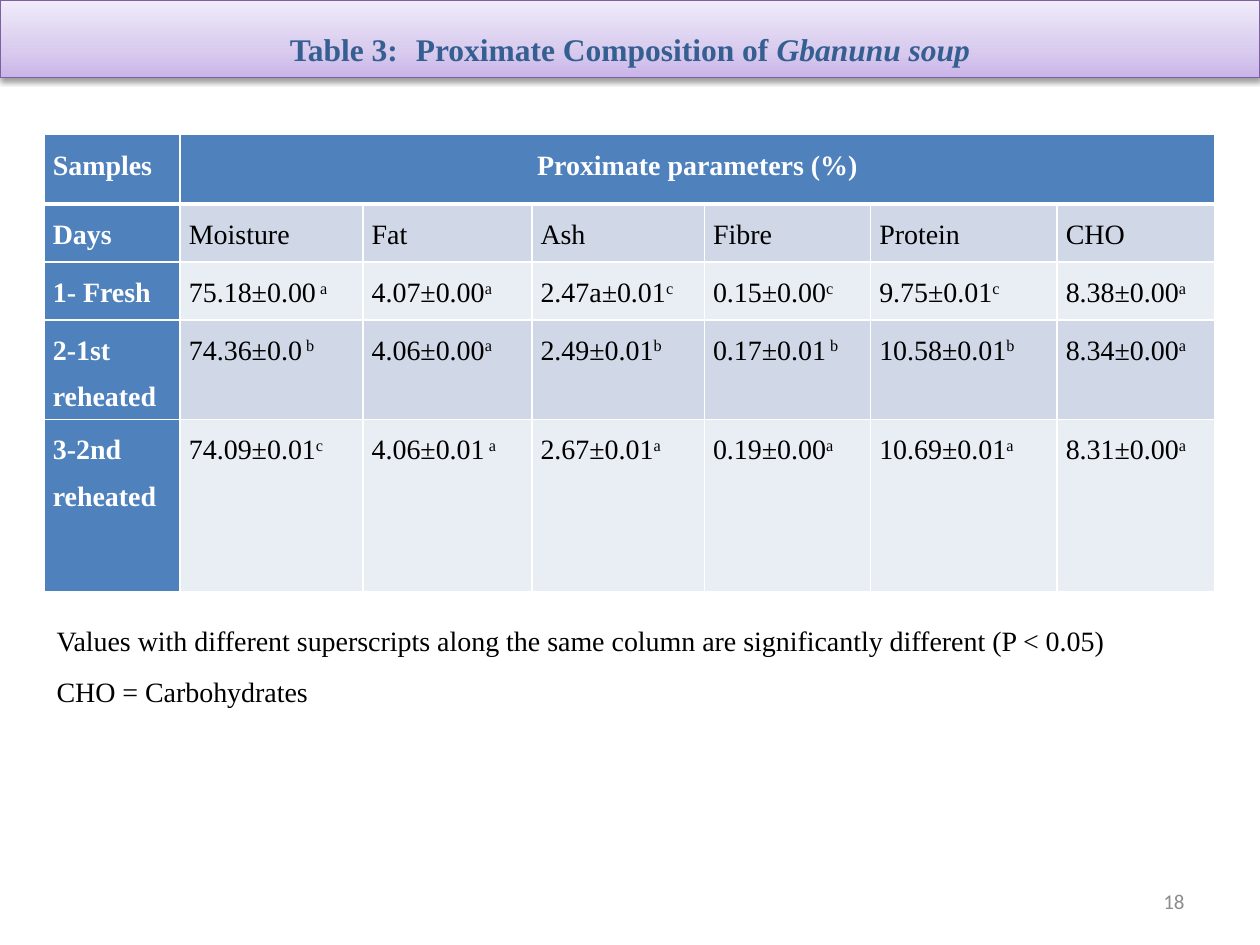
"""Build a slide with the proximate composition table of Gbanunu soup."""
from lxml.etree import SubElement
from pptx import Presentation
from pptx.dml.color import RGBColor
from pptx.enum.shapes import MSO_SHAPE as Shape
from pptx.enum.text import MSO_ANCHOR as Anchor, PP_ALIGN as Align
from pptx.oxml import parse_xml
from pptx.oxml.ns import nsdecls, qn
from pptx.util import Pt

TITLE = [("Table 3:\tProximate Composition of ", False), ("Gbanunu soup", True)]
ROWS = [
    ["Samples", "Proximate parameters (%)"],
    ["Days", "Moisture", "Fat", "Ash", "Fibre", "Protein", "CHO"],
    ["1- Fresh", "75.18±0.00^ a", "4.07±0.00^a", "2.47a±0.01^c",
     "0.15±0.00^c", "9.75±0.01^c", "8.38±0.00^a"],
    ["2-1st reheated", "74.36±0.0^ b", "4.06±0.00^a", "2.49±0.01^b",
     "0.17±0.01^ b", "10.58±0.01^b", "8.34±0.00^a"],
    ["3-2nd reheated", "74.09±0.01^c", "4.06±0.01^ a", "2.67±0.01^a",
     "0.19±0.00^a", "10.69±0.01^a", "8.31±0.00^a"],
]
NOTES = [
    "Values with different superscripts along the same column are "
    "significantly different (P < 0.05)",
    "CHO = Carbohydrates",
]
PAGE_NUMBER = "18"
COLUMN_WIDTHS = [77.8, 104.4, 96.5, 98.6, 95, 106.6, 90]
ROW_HEIGHTS = [39.6, 33.1, 33.1, 56.9, 98.6]
LEFT, WIDTH = 25.2, 668.9
SERIF, SANS = "Times New Roman", "Calibri"

BLACK = RGBColor(0x00, 0x00, 0x00)
WHITE = RGBColor(0xFF, 0xFF, 0xFF)
BLUE = RGBColor(0x4F, 0x81, 0xBD)
NAVY = RGBColor(0x36, 0x5F, 0x91)
PURPLE = RGBColor(0x7D, 0x60, 0xA0)
GRAY = RGBColor(0x8C, 0x8C, 0x8C)
BANDS = [RGBColor(0xE9, 0xED, 0xF4), RGBColor(0xD0, 0xD8, 0xE8)]
LILACS = [(0, RGBColor(0xC9, 0xB5, 0xE8)), (35, RGBColor(0xD8, 0xCB, 0xEE)),
          (100, RGBColor(0xF0, 0xEA, 0xF9))]


def style(span, size, color, bold=False, italic=False, name=SERIF):
    font = span.font
    font.name, font.size, font.bold, font.italic = name, Pt(size), bold, italic
    font.color.rgb = color


def add_border(cell, side, width):
    line = SubElement(cell._tc.get_or_add_tcPr(), qn(f"a:{side}"), w=str(Pt(width)))
    fill = SubElement(line, qn("a:solidFill"))
    SubElement(fill, qn("a:srgbClr"), val=str(WHITE))


def fill_cell(cell, text, row, column):
    heading = row == 0 or column == 0
    cell.margin_left = cell.margin_right = Pt(5)
    cell.margin_top = cell.margin_bottom = 0
    add_border(cell, "lnL", 1)
    add_border(cell, "lnR", 1)
    add_border(cell, "lnT", 3 if row == 1 else 1)
    add_border(cell, "lnB", 3 if row == 0 else 1)
    cell.fill.solid()
    cell.fill.fore_color.rgb = BLUE if heading else BANDS[row % 2]
    para = cell.text_frame.paragraphs[0]
    para.alignment = Align.CENTER if cell.is_merge_origin else Align.JUSTIFY
    para.line_spacing = 1.5
    value, _, mark = text.partition("^")
    for part, baseline in ((value, 0), (mark, 30000)):
        if part:
            span = para.add_run()
            span.text = part
            style(span, 16, WHITE if heading else BLACK, bold=heading)
            if baseline:
                span.font._element.set("baseline", str(baseline))


def add_table(page):
    frame = page.shapes.add_table(len(ROWS), len(COLUMN_WIDTHS), Pt(LEFT), Pt(77),
                                  Pt(WIDTH), Pt(sum(ROW_HEIGHTS)))
    table = frame.table
    table.first_col = True
    for column, width in zip(table.columns, COLUMN_WIDTHS):
        column.width = Pt(width)
    for row, height in zip(table.rows, ROW_HEIGHTS):
        row.height = Pt(height)
    table.cell(0, 1).merge(table.cell(0, len(COLUMN_WIDTHS) - 1))
    for r, texts in enumerate(ROWS):
        for c, text in enumerate(texts):
            fill_cell(table.cell(r, c), text, r, c)


def add_banner(page):
    banner = page.shapes.add_shape(Shape.RECTANGLE, 0, Pt(0.5), Pt(720), Pt(44))
    banner.line.color.rgb = PURPLE
    banner.line.width = Pt(0.75)
    stops = "".join(f'<a:gs pos="{place * 1000}"><a:srgbClr val="{color}"/></a:gs>'
                    for place, color in LILACS)
    properties = banner._element.spPr
    properties.find(qn("a:prstGeom")).addnext(parse_xml(
        f'<a:gradFill {nsdecls("a")} rotWithShape="1"><a:gsLst>{stops}</a:gsLst>'
        '<a:lin ang="16200000" scaled="0"/></a:gradFill>'))
    properties.append(parse_xml(
        f'<a:effectLst {nsdecls("a")}><a:outerShdw blurRad="{Pt(3.1)}" '
        f'dist="{Pt(1.6)}" dir="5400000" rotWithShape="0"><a:srgbClr val="{BLACK}">'
        '<a:alpha val="38000"/></a:srgbClr></a:outerShdw></a:effectLst>'))
    banner.text_frame.word_wrap = True
    para = banner.text_frame.paragraphs[0]
    para.alignment, para.line_spacing, para.space_before = Align.CENTER, 1.5, Pt(2)
    for text, italic in TITLE:
        span = para.add_run()
        span.text = text
        style(span, 18, NAVY, bold=True, italic=italic)


def add_text(page, place, lines, size, color, name, alignment, spacing, anchor):
    box = page.shapes.add_textbox(*map(Pt, place))
    frame = box.text_frame
    frame.word_wrap = True
    frame.vertical_anchor = anchor
    frame.text = "\n".join(lines)
    for para in frame.paragraphs:
        para.alignment, para.line_spacing = alignment, spacing
        style(para.runs[0], size, color, name=name)


def main():
    deck = Presentation()
    deck.slide_width, deck.slide_height = Pt(720), Pt(540)
    page = deck.slides.add_slide(deck.slide_layouts[6])
    add_table(page)
    add_banner(page)
    add_text(page, (LEFT, 343.4, WIDTH, 62.6), NOTES, 16, BLACK, SERIF,
             Align.JUSTIFY, 1.5, Anchor.TOP)
    add_text(page, (516, 500.5, 168, 28.8), [PAGE_NUMBER], 12, GRAY, SANS,
             Align.RIGHT, 1, Anchor.MIDDLE)
    deck.save("out.pptx")


if __name__ == "__main__":
    main()
